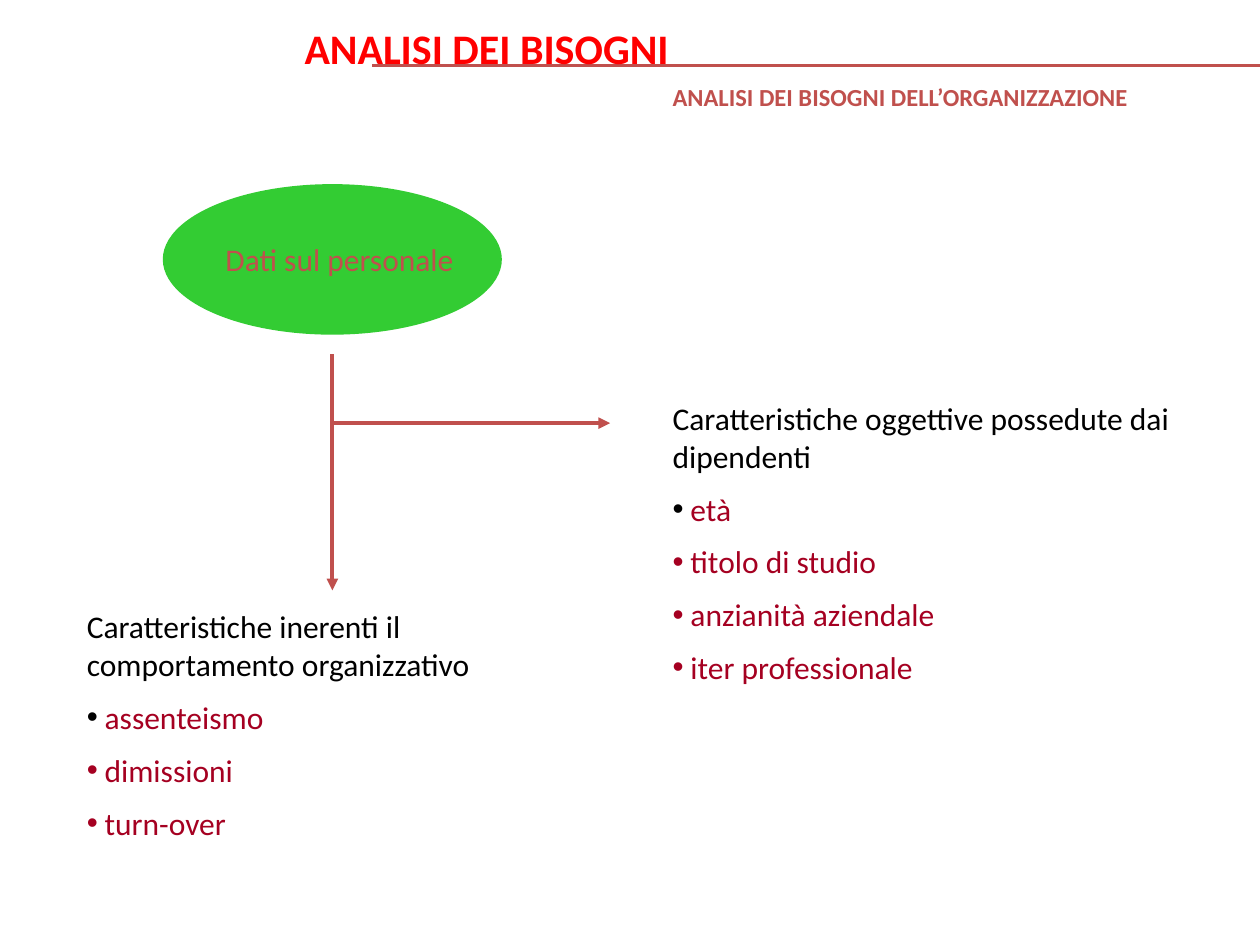
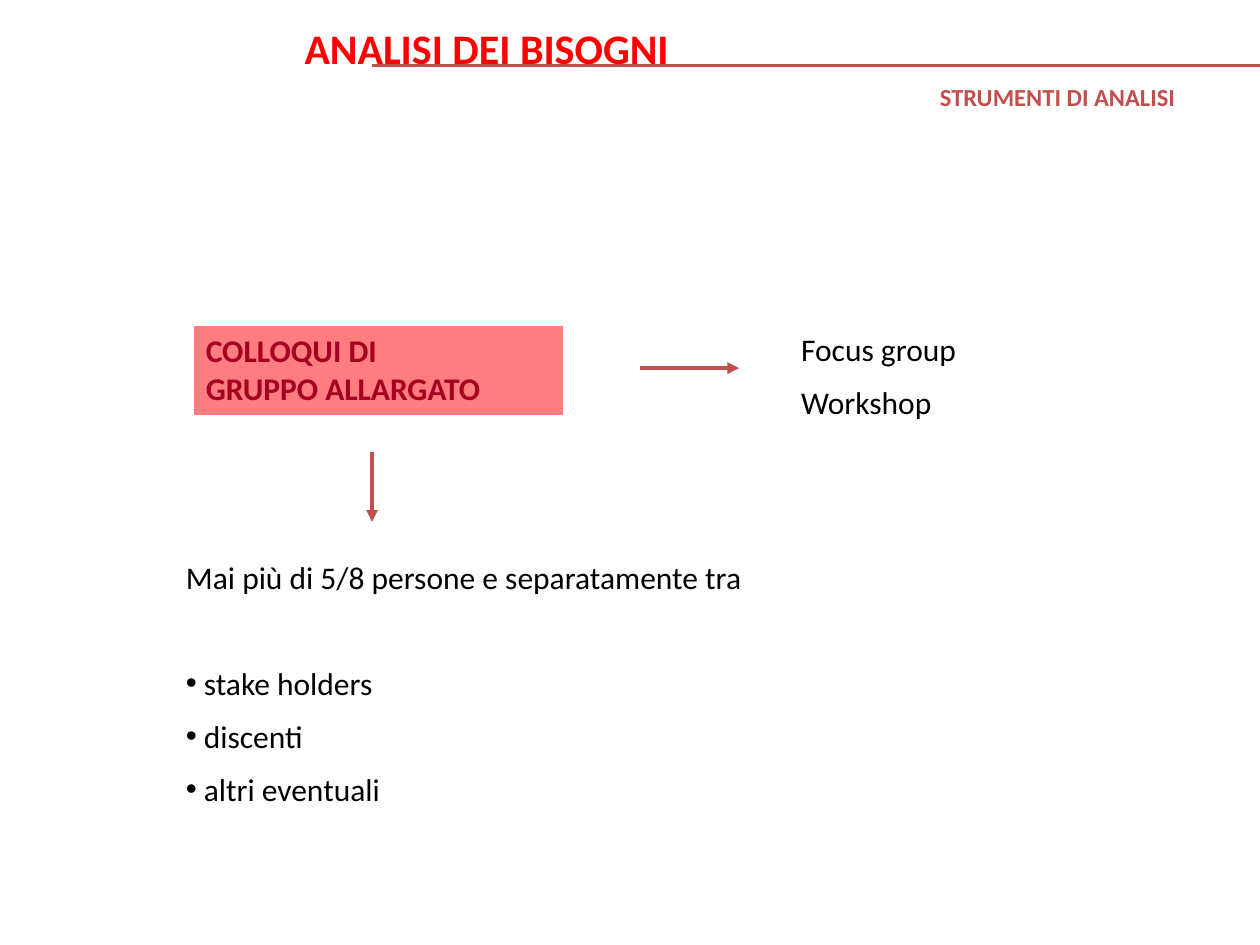
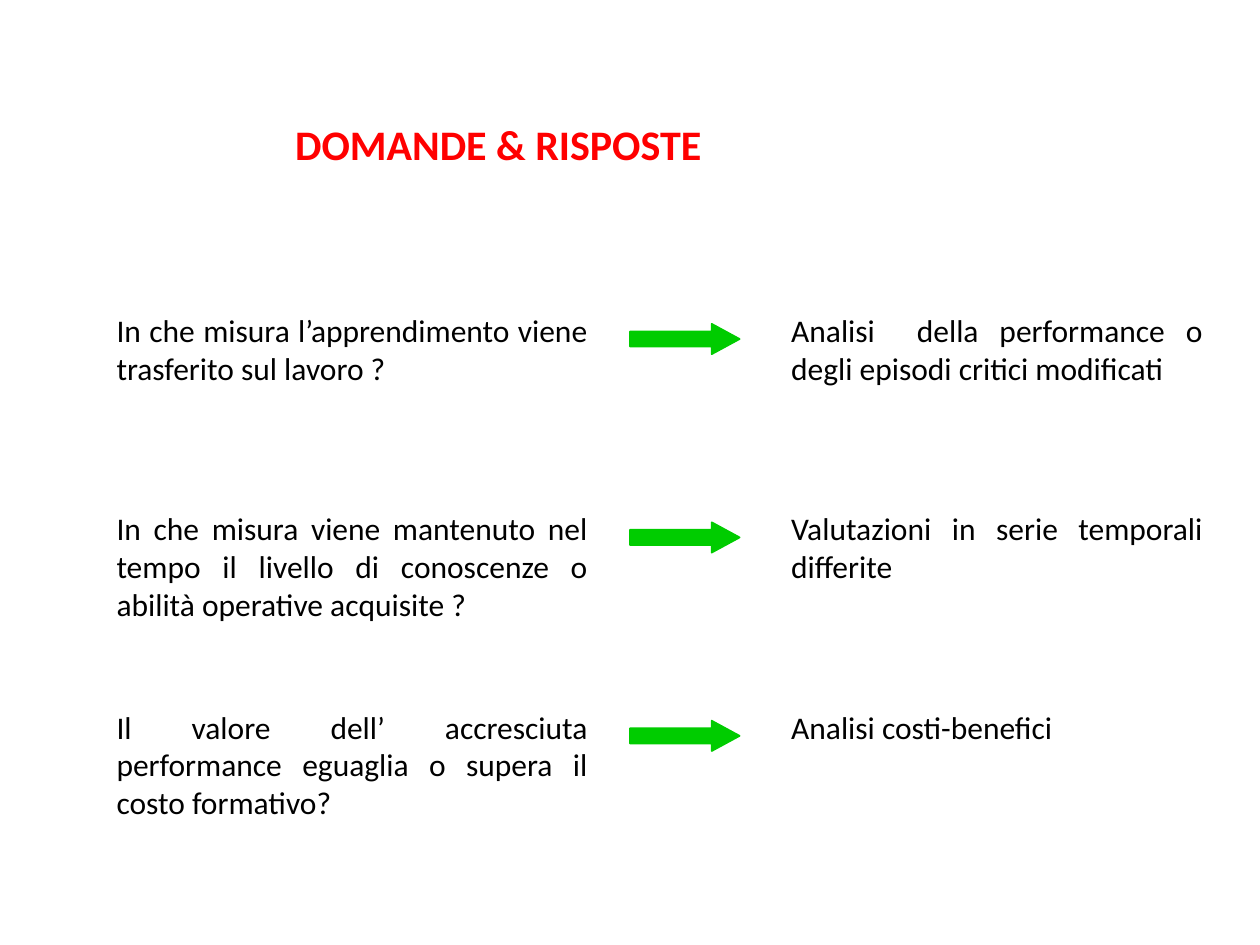
from lxml import etree
from pptx import Presentation
from pptx.dml.color import RGBColor
from pptx.enum.shapes import MSO_CONNECTOR, MSO_SHAPE
from pptx.enum.text import MSO_ANCHOR, PP_ALIGN
from pptx.oxml.ns import qn
from pptx.util import Cm, Pt

STRAIGHT = MSO_CONNECTOR.STRAIGHT
OVAL, RECTANGLE, ARROW = MSO_SHAPE.OVAL, MSO_SHAPE.RECTANGLE, MSO_SHAPE.RIGHT_ARROW
TOP, MIDDLE = MSO_ANCHOR.TOP, MSO_ANCHOR.MIDDLE
LEFT, JUSTIFY = PP_ALIGN.LEFT, PP_ALIGN.JUSTIFY

BLACK = RGBColor(0x00, 0x00, 0x00)
WHITE = RGBColor(0xFF, 0xFF, 0xFF)
RED = RGBColor(0xFF, 0x00, 0x00)
BRICK = RGBColor(0xC0, 0x50, 0x4D)
WINE = RGBColor(0xA5, 0x00, 0x21)
PINK = RGBColor(0xFF, 0x7C, 0x80)
LIME = RGBColor(0x33, 0xCC, 0x33)
GREEN = RGBColor(0x00, 0xCC, 0x00)

FONT = "Calibri"
BODY = {"size": Pt(18), "color": BLACK}
HEADING = {"size": Pt(24), "color": RED, "bold": True}
SUBTITLE = {"size": Pt(14), "color": BRICK, "bold": True}
GAP = 8.6
LINE_HEIGHT = 21.97
INDENT = Cm(0.36)

NEEDS_TITLE = "ANALISI DEI BISOGNI"
STAFF = {
    "subtitle": ("ANALISI DEI BISOGNI DELL’ORGANIZZAZIONE", 13.31, 12.01),
    "topic": "Dati sul personale",
    "lists": [
        ((13.31, 7.92, 11.2, 6.38), "Caratteristiche oggettive possedute dai dipendenti",
         ["età", "titolo di studio", "anzianità aziendale", "iter professionale"]),
        ((1.5, 12.12, 9.8, 5.23), "Caratteristiche inerenti il comportamento organizzativo",
         ["assenteismo", "dimissioni", "turn-over"]),
    ],
    "arrows": [(6.7, 8.53, 12.3, 8.53), (6.7, 7.14, 6.7, 11.9)],
}
TOOLS = {
    "subtitle": ("STRUMENTI DI ANALISI", 18.7, 6.2),
    "topic": ["COLLOQUI DI", "GRUPPO ALLARGATO"],
    "formats": ["Focus group", "Workshop"],
    "rule": "Mai più di 5/8 persone e separatamente tra",
    "groups": ["stake holders", "discenti", "altri eventuali"],
    "arrows": [(12.9, 7.42, 14.9, 7.42), (7.5, 9.12, 7.5, 10.52)],
}
QUESTIONS_TITLE = "DOMANDE & RISPOSTE"
QUESTIONS = [
    ("In che misura l’apprendimento viene trasferito sul lavoro ?",
     "Analisi  della performance o degli episodi critici modificati"),
    ("In che misura viene mantenuto nel tempo il livello di conoscenze o abilità operative acquisite ?",
     "Valutazioni in serie temporali differite"),
    ("Il valore dell’ accresciuta performance eguaglia o supera il costo formativo?",
     "Analisi costi-benefici"),
]
FIRST_ROW, ROW_PITCH = 6.14, 4


def write(frame, lines, style, gap=GAP, align=LEFT):
    for index, line in enumerate(lines):
        para = frame.paragraphs[0] if index == 0 else frame.add_paragraph()
        para.alignment = align
        para.space_before = Pt(gap if index else 0)
        span = para.add_run()
        span.text = line
        for name, value in {"name": FONT, **style}.items():
            if name == "color":
                span.font.color.rgb = value
            else:
                setattr(span.font, name, value)


def add_text(page, place, lines, style=BODY, align=LEFT):
    box = page.shapes.add_textbox(*map(Cm, place))
    box.text_frame.word_wrap = True
    write(box.text_frame, lines, style, align=align)
    return box.text_frame


def add_bullet(para, color):
    layout = para._p.get_or_add_pPr()
    layout.set("marL", str(INDENT))
    layout.set("indent", str(-INDENT))
    paint = etree.SubElement(layout, qn("a:buClr"))
    etree.SubElement(paint, qn("a:srgbClr"), val=str(color))
    etree.SubElement(layout, qn("a:buFont"), typeface="Arial")
    etree.SubElement(layout, qn("a:buChar"), char="•")


def add_list(page, place, intro, items, color=BLACK, lead_gap=GAP):
    frame = add_text(page, place, [intro, *items])
    for index, para in enumerate(frame.paragraphs[1:]):
        para.runs[0].font.color.rgb = color
        add_bullet(para, color if index else BLACK)
    frame.paragraphs[1].space_before = Pt(lead_gap)


def add_figure(page, kind, place, fill, outline):
    figure = page.shapes.add_shape(kind, *map(Cm, place))
    figure.shadow.inherit = False
    figure.fill.solid()
    figure.fill.fore_color.rgb = fill
    figure.line.color.rgb = outline
    figure.line.width = Pt(1)
    return figure


def label(figure, lines, style, anchor):
    frame = figure.text_frame
    frame.word_wrap = False
    frame.vertical_anchor = anchor
    write(frame, lines, style, gap=0)


def add_line(page, ends, width=2.25, arrow=True):
    line = page.shapes.add_connector(STRAIGHT, *map(Cm, ends))
    line.line.color.rgb = BRICK
    line.line.width = Pt(width)
    if arrow:
        etree.SubElement(line.line._ln, qn("a:tailEnd"), type="triangle")
    etree.SubElement(line._element.spPr, qn("a:effectLst"))


def add_needs_page(deck, content):
    page = deck.slides.add_slide(deck.slide_layouts[6])
    text, left, width = content["subtitle"]
    add_text(page, (left, 1.52, width, 0.84), [text], SUBTITLE)
    add_line(page, (7.5, 1.32, 25.4, 1.32), width=1.5, arrow=False)
    add_text(page, (5.89, 0.33, 10, 1.27), [NEEDS_TITLE], HEADING)
    for ends in content["arrows"]:
        add_line(page, ends)
    return page


def build_staff(deck):
    page = add_needs_page(deck, STAFF)
    topic = add_figure(page, OVAL, (3.3, 3.73, 6.8, 3), LIME, LIME)
    label(topic, [STAFF["topic"]], {**BODY, "color": BRICK}, MIDDLE)
    for place, intro, items in STAFF["lists"]:
        add_list(page, place, intro, items, WINE)


def build_tools(deck):
    page = add_needs_page(deck, TOOLS)
    topic = add_figure(page, RECTANGLE, (3.9, 6.55, 7.47, 1.83), PINK, WHITE)
    label(topic, TOOLS["topic"], {**BODY, "color": WINE, "bold": True}, TOP)
    add_text(page, (15.9, 6.53, 6.2, 2.16), TOOLS["formats"])
    add_list(page, (3.5, 11.12, 15.6, 5.61), TOOLS["rule"], TOOLS["groups"],
             lead_gap=2 * GAP + LINE_HEIGHT)


def build_questions(deck):
    page = deck.slides.add_slide(deck.slide_layouts[6])
    add_text(page, (5.7, 2.26, 15.8, 1.27), [QUESTIONS_TITLE], HEADING)
    for row, (question, answer) in enumerate(QUESTIONS):
        top = FIRST_ROW + row * ROW_PITCH
        add_text(page, (2.1, top, 10, 2.54), [question], align=JUSTIFY)
        add_text(page, (15.7, top, 8.8, 1.78), [answer], align=JUSTIFY)
        arrow = add_figure(page, ARROW, (12.7, top + 0.39, 2.21, 0.61), GREEN, GREEN)
        arrow.adjustments[0] = 0.5
        arrow.adjustments[1] = 0.92


def main():
    deck = Presentation()
    deck.slide_width, deck.slide_height = Cm(25.4), Cm(19.05)
    for build in (build_staff, build_tools, build_questions):
        build(deck)
    deck.save("out.pptx")


if __name__ == "__main__":
    main()
